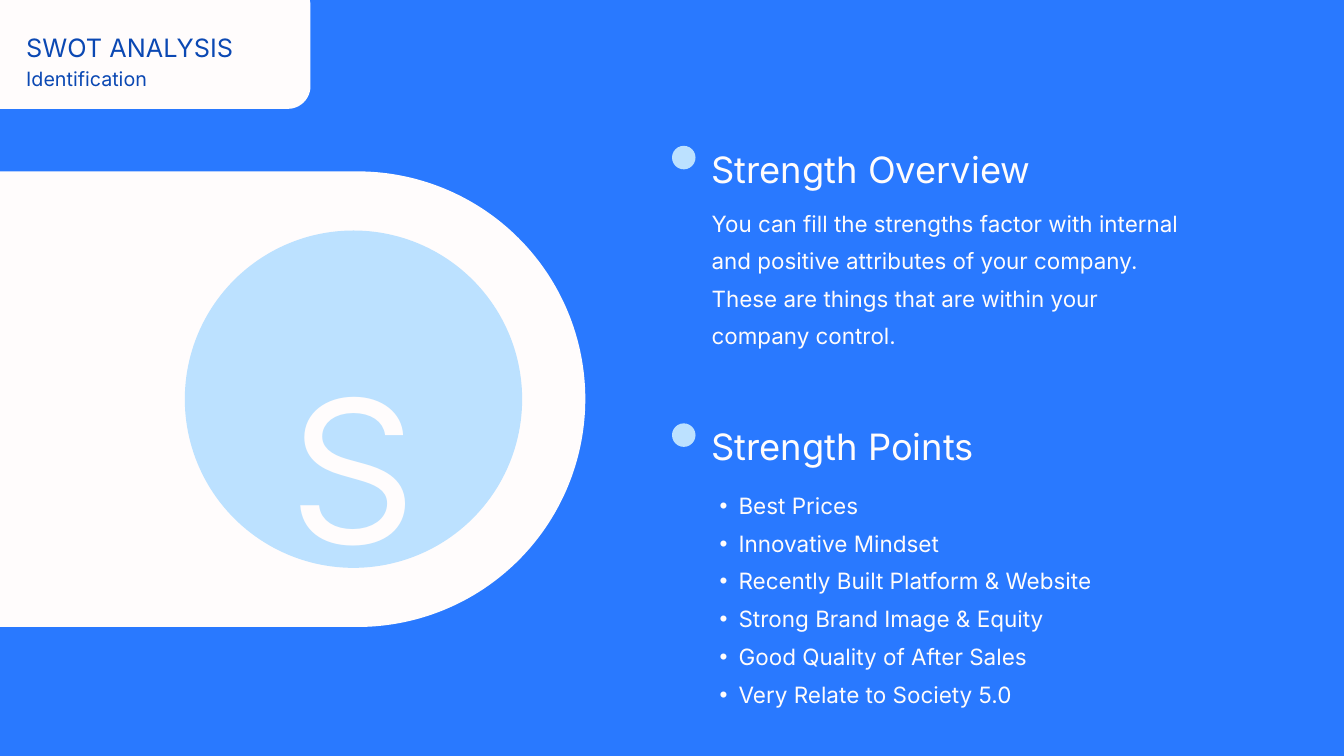
"""Build a SWOT slide on strengths: letter badge, overview and bullet points."""
import pptx
import pptx.dml.color
import pptx.enum.shapes
import pptx.enum.text
import pptx.oxml.ns
import pptx.util
from lxml import etree

W, H = 20, 11.25
COLORS = {"blue": "2979FF", "white": "FFFCFC", "navy": "0B48B3", "sky": "BCE1FF"}
MSO = pptx.enum.shapes.MSO_SHAPE
ALIGN = pptx.enum.text.PP_ALIGN
FRAME = {
    "word_wrap": True,
    "auto_size": pptx.enum.text.MSO_AUTO_SIZE.NONE,
    "vertical_anchor": pptx.enum.text.MSO_ANCHOR.TOP,
    "margin_left": 0, "margin_top": 0, "margin_right": 0, "margin_bottom": 0,
}
PARAGRAPH = {"line_spacing": 1.4, "space_before": pptx.util.Pt(0), "space_after": pptx.util.Pt(0)}
FONT = {"name": "Inter", "bold": False}

OVERVIEW = [
    "You can fill the strengths factor with internal",
    "and positive attributes of your company.",
    "These are things that are within your",
    "company control.",
]
POINTS = [
    "Best Prices",
    "Innovative Mindset",
    "Recently Built Platform & Website",
    "Strong Brand Image & Equity",
    "Good Quality of After Sales",
    "Very Relate to Society 5.0",
]

EDGE, COLUMN, DOT = 0.39, 10.59, 0.35
SECTIONS = [1.93, 6.06]
BADGE_X, BADGE_Y, BADGE = 5.26, 5.94, 5.02
PANEL_W, PANEL_L, PANEL_X = 6.78, 10.14, 3.64

SHAPES = [
    (MSO.ROUNDED_RECTANGLE, (-0.56, -0.25, 5.18, 1.87), "white", [0.18], 0),
    (MSO.ROUND_2_SAME_RECTANGLE,
     (PANEL_X - PANEL_W / 2, BADGE_Y - PANEL_L / 2, PANEL_W, PANEL_L), "white", [0.5, 0], 90),
    (MSO.OVAL, (BADGE_X - BADGE / 2, BADGE_Y - BADGE / 2, BADGE, BADGE), "sky", [], 0),
] + [(MSO.OVAL, (W / 2, y + 0.24, DOT, DOT), "sky", [], 0) for y in SECTIONS]

TEXTS = [
    (0, ["SWOT ANALYSIS"], (EDGE, 0.3, 4.04, 0.5), 27.1, "navy", ALIGN.LEFT, False),
    (None, ["Identification"], (EDGE, 0.85, 2.84, 0.39), 21.1, "navy", ALIGN.LEFT, False),
    (None, ["S"], (BADGE_X - 1.72, 3.72, 3.44, 3.99), 212.5, "white", ALIGN.CENTER, False),
    (1, ["Strength Overview"], (COLUMN, SECTIONS[0], 7.08, 0.73), 38.9, "white", ALIGN.LEFT, False),
    (2, OVERVIEW, (COLUMN, SECTIONS[0] + 1.03, 8.9, 1.82), 24, "white", ALIGN.LEFT, False),
    (3, ["Strength Points"], (COLUMN, SECTIONS[1], 6.56, 0.73), 38.9, "white", ALIGN.LEFT, False),
    (4, POINTS, (COLUMN - 0.17, SECTIONS[1] + 1.1, 8.62, 2.75), 24.1, "white", ALIGN.LEFT, True),
]


def rgb(name):
    return pptx.dml.color.RGBColor.from_string(COLORS[name])


def apply(obj, values):
    for key, value in values.items():
        setattr(obj, key, value)


def inches(box):
    return [pptx.util.Inches(v) for v in box]


def set_bullet(p, bulleted):
    pPr = p._p.get_or_add_pPr()
    margin, indent = (0.57, -0.28) if bulleted else (0, 0)
    pPr.set("marL", str(pptx.util.Inches(margin)))
    pPr.set("indent", str(pptx.util.Inches(indent)))
    tag = "a:buChar" if bulleted else "a:buNone"
    bullet = etree.SubElement(pPr, pptx.oxml.ns.qn(tag))
    if bulleted:
        p.level = 1
        bullet.set("char", "•")


def add_shape(s, kind, box, color, adjustments, rotation):
    sp = s.shapes.add_shape(kind, *inches(box))
    sp.shadow.inherit = False
    sp.fill.solid()
    sp.fill.fore_color.rgb = rgb(color)
    sp.line.fill.background()
    sp.rotation = rotation
    for i, value in enumerate(adjustments):
        sp.adjustments[i] = value


def add_text(s, holder, lines, box, size, color, align, bulleted):
    if holder is None:
        sp = s.shapes.add_textbox(*inches(box))
    else:
        sp = s.placeholders[holder]
        apply(sp, dict(zip(("left", "top", "width", "height"), inches(box))))
        s.shapes.element.append(sp.element)
    tf = sp.text_frame
    apply(tf, FRAME)
    for i, line in enumerate(lines):
        p = tf.add_paragraph() if i else tf.paragraphs[0]
        apply(p, {**PARAGRAPH, "alignment": align})
        set_bullet(p, bulleted)
        r = p.add_run()
        r.text = line
        apply(r.font, {**FONT, "size": pptx.util.Pt(size)})
        r.font.color.rgb = rgb(color)


def main():
    prs = pptx.Presentation()
    prs.slide_width, prs.slide_height = inches((W, H))
    s = prs.slides.add_slide(prs.slide_layouts.get_by_name("Comparison"))
    s.background.fill.solid()
    s.background.fill.fore_color.rgb = rgb("blue")
    for shape in SHAPES:
        add_shape(s, *shape)
    for text in TEXTS:
        add_text(s, *text)
    prs.save("out.pptx")


if __name__ == "__main__":
    main()
